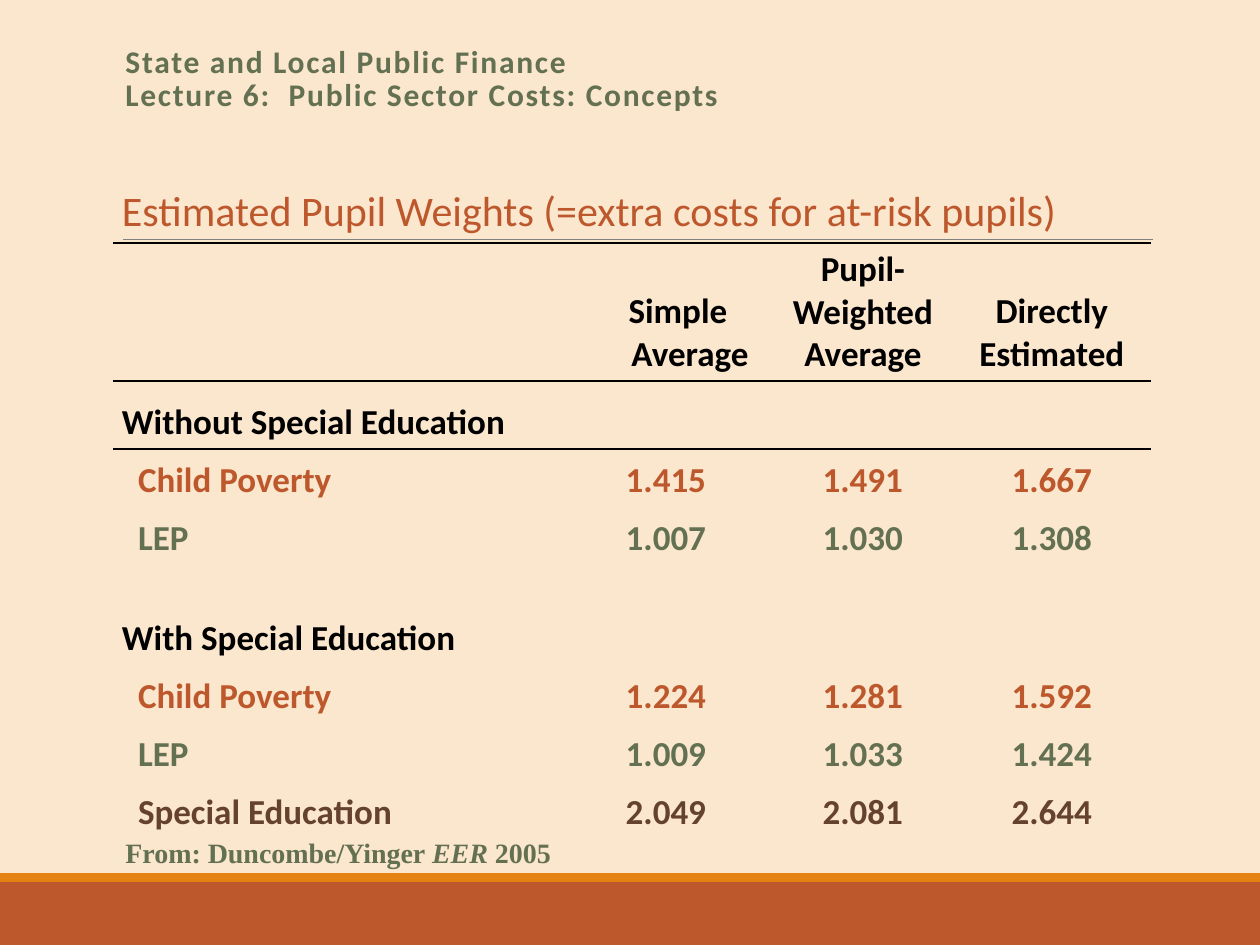
from lxml.etree import SubElement
from pptx import Presentation
from pptx.dml.color import RGBColor
from pptx.enum.shapes import MSO_CONNECTOR, MSO_SHAPE
from pptx.enum.text import MSO_ANCHOR, PP_ALIGN
from pptx.oxml.ns import qn
from pptx.util import Emu, Pt

BLACK = RGBColor(0x00, 0x00, 0x00)
CREAM = RGBColor(0xFB, 0xE6, 0xCE)
RUST = RGBColor(0xBD, 0x58, 0x2C)
ORANGE = RGBColor(0xE4, 0x83, 0x12)
GREEN = RGBColor(0x63, 0x70, 0x52)
BROWN = RGBColor(0x65, 0x41, 0x30)
GREY = RGBColor(0x80, 0x80, 0x80)

NO_TABLE_STYLE = "{2D5ABB26-0587-4C30-8999-92F81FD0307C}"
COLUMN_WIDTHS = (446, 214, 180, 198)
TITLE_HEIGHT, HEADER_HEIGHT, ROW_HEIGHT = 64, 138, 58
ITEM_INDENT = 16

TABLE_TITLE = "Estimated Pupil Weights (=extra costs for at-risk pupils)"
HEADERS = ("Simple Average", "Pupil-\nWeighted\nAverage", "Directly\nEstimated")
# Each group: heading, heading row height, items
GROUPS = (
    ("Without Special Education", 68, (
        ("Child Poverty", RUST, ("1.415", "1.491", "1.667")),
        ("LEP", GREEN, ("1.007", "1.030", "1.308")),
    )),
    ("With Special Education", 100, (
        ("Child Poverty", RUST, ("1.224", "1.281", "1.592")),
        ("LEP", GREEN, ("1.009", "1.033", "1.424")),
        ("Special Education", BROWN, ("2.049", "2.081", "2.644")),
    )),
)


def px(length):
    return Emu(round(length * 914400 / 126))


def write_text(paragraph, text, size=20, color=BLACK, bold=True, italic=False,
               font="Calibri", spacing=0):
    """Add text to the paragraph; a newline becomes a line break."""
    for index, line in enumerate(text.split("\n")):
        if index:
            paragraph.add_line_break()
        run = paragraph.add_run()
        run.text = line
        run.font.name = font
        run.font.size = Pt(size)
        run.font.bold = bold
        run.font.italic = italic
        run.font.color.rgb = color
        if spacing:
            run.font._element.set("spc", str(spacing * 100))


def add_text_box(slide, left, top, width, height):
    frame = slide.shapes.add_textbox(px(left), px(top), px(width), px(height)).text_frame
    frame.word_wrap = True
    return frame.paragraphs[0]


def add_band(slide, left, top, width, height, color):
    band = slide.shapes.add_shape(MSO_SHAPE.RECTANGLE, px(left), px(top), px(width), px(height))
    band.shadow.inherit = False
    band.fill.solid()
    band.fill.fore_color.rgb = color
    band.line.fill.background()


def add_rule(slide, left, top, width):
    rule = slide.shapes.add_connector(
        MSO_CONNECTOR.STRAIGHT, px(left), px(top), px(left + width), px(top))
    rule.line.color.rgb = GREY
    rule.line.width = Pt(0.5)
    SubElement(rule._element.spPr, qn("a:effectLst"))


def add_lecture_heading(slide, left, top, width, height):
    paragraph = add_text_box(slide, left, top, width, height)
    paragraph.line_spacing = 0.85
    write_text(paragraph, "State and Local Public Finance\n"
               "Lecture 6:  Public Sector Costs: Concepts", size=18, color=GREEN, spacing=1)


def add_source_note(slide, left, top, width, height):
    paragraph = add_text_box(slide, left, top, width, height)
    for text, italic in (("From: Duncombe/Yinger ", False), ("EER", True), (" 2005", False)):
        write_text(paragraph, text, size=16, color=GREEN, italic=italic, font="Times New Roman")


def indent_paragraph(paragraph, margin, first_line=0):
    properties = paragraph._p.get_or_add_pPr()
    properties.set("marL", str(px(margin)))
    properties.set("indent", str(px(first_line)))


def fill_cell(cell, text, align=PP_ALIGN.LEFT, **text_format):
    """Write one paragraph for each line of text."""
    frame = cell.text_frame
    for index, line in enumerate(text.split("\n")):
        paragraph = frame.add_paragraph() if index else frame.paragraphs[0]
        paragraph.alignment = align
        write_text(paragraph, line, **text_format)
    return frame.paragraphs[0]


def border_cell(cell, *sides):
    properties = cell._tc.get_or_add_tcPr()
    for position, side in enumerate(sides):
        line = properties.makeelement(qn(f"a:{side}"), {"w": str(Pt(1))})
        fill = SubElement(line, qn("a:solidFill"))
        SubElement(fill, qn("a:srgbClr"), val=str(BLACK))
        properties.insert(position, line)


def add_weights_table(slide, left, top):
    heights = [TITLE_HEIGHT, HEADER_HEIGHT]
    for _, heading_height, items in GROUPS:
        heights += [heading_height] + [ROW_HEIGHT] * len(items)
    table = slide.shapes.add_table(
        len(heights), len(COLUMN_WIDTHS), px(left), px(top),
        px(sum(COLUMN_WIDTHS)), px(sum(heights))).table
    table.first_row = table.horz_banding = False
    table._tbl.tblPr.find(qn("a:tableStyleId")).text = NO_TABLE_STYLE
    for column, width in zip(table.columns, COLUMN_WIDTHS):
        column.width = px(width)
    for row, height in zip(table.rows, heights):
        row.height = px(height)
    for cell in table.iter_cells():
        cell.fill.background()
        cell.vertical_anchor = MSO_ANCHOR.BOTTOM
        cell.margin_left = cell.margin_right = px(9)
        cell.margin_top = cell.margin_bottom = px(5)

    table.cell(0, 0).merge(table.cell(0, 3))
    fill_cell(table.cell(0, 0), TABLE_TITLE, size=24, color=RUST, bold=False)
    for column in range(len(COLUMN_WIDTHS)):
        border_cell(table.cell(0, column), "lnB")
        border_cell(table.cell(1, column), "lnT", "lnB")
        border_cell(table.cell(2, column), "lnT")
    for column, header in enumerate(HEADERS, start=1):
        fill_cell(table.cell(1, column), header, PP_ALIGN.CENTER)
    indent_paragraph(table.cell(1, 1).text_frame.paragraphs[0], 48, -24)

    row = 2
    for heading, _, items in GROUPS:
        table.cell(row, 0).merge(table.cell(row, 1))
        fill_cell(table.cell(row, 0), heading)
        for row, (name, color, values) in enumerate(items, start=row + 1):
            indent_paragraph(fill_cell(table.cell(row, 0), name, color=color), ITEM_INDENT)
            for column, value in enumerate(values, start=1):
                fill_cell(table.cell(row, column), value, PP_ALIGN.CENTER, color=color)
        row += 1


def main():
    presentation = Presentation()
    presentation.slide_width, presentation.slide_height = px(1260), px(945)
    slide = presentation.slides.add_slide(presentation.slide_layouts[6])
    slide.background.fill.solid()
    slide.background.fill.fore_color.rgb = CREAM
    add_band(slide, 0, 882, 1260, 63, RUST)
    add_band(slide, 0, 873, 1260, 9, ORANGE)
    add_rule(slide, 123, 239, 1030)
    add_lecture_heading(slide, 113, 42, 1040, 82)
    add_weights_table(slide, 113, 179)
    add_source_note(slide, 113, 829, 638, 63)
    presentation.save("out.pptx")


if __name__ == "__main__":
    main()
